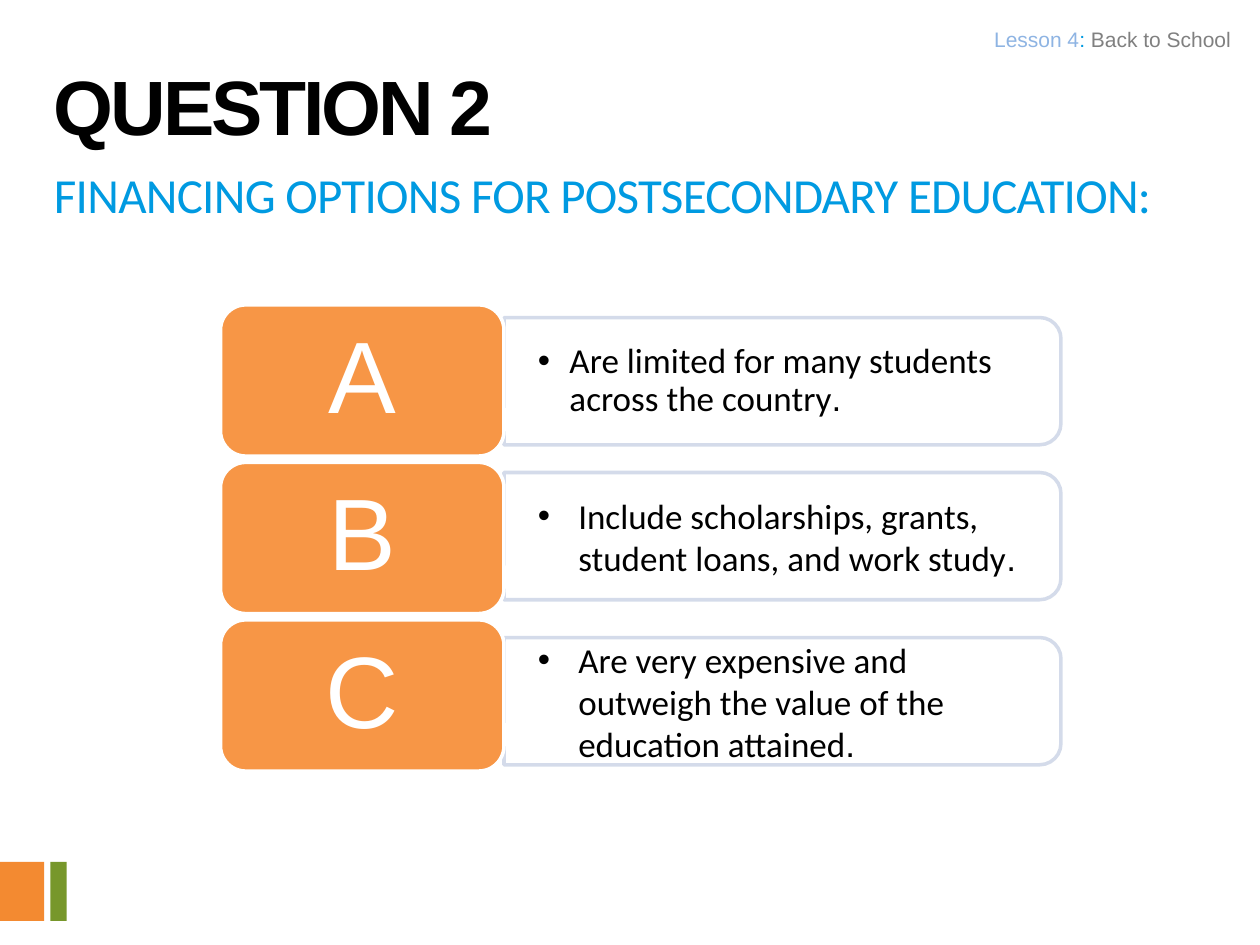
from dataclasses import dataclass

from lxml import etree
from pptx import Presentation, util as u
from pptx.dml.color import RGBColor
from pptx.enum import shapes, text
from pptx.oxml.ns import qn


@dataclass(frozen=True)
class Theme:
    sans: str = "Arial"
    body: str = "Calibri"
    black: str = "000000"
    white: str = "FFFFFF"
    blue: str = "009AE1"
    pale_blue: str = "8EB4E3"
    grey: str = "808080"
    tile: str = "F79646"
    outline: str = "D0D8E8"
    orange: str = "F38A31"
    green: str = "77972B"
    header_size: int = 12
    answer_size: int = 20
    subtitle_size: int = 28
    title_size: int = 44
    letter_size: int = 58


class Deck:
    """Places elements on a grid of 100 columns by 75 rows."""

    def __init__(self, theme):
        self.theme = theme
        self.prs = Presentation()
        self.prs.slide_width, self.prs.slide_height = u.Inches(10), u.Inches(7.5)
        self.s = self.prs.slides.add_slide(self.prs.slide_layouts[6])

    def grid(self, *cells):
        return [round(c * self.prs.slide_width / 100) for c in cells]

    def shape(self, kind, box, fill, line=None, alpha=None):
        sp = self.s.shapes.add_shape(kind, *self.grid(*box))
        sp.shadow.inherit = False
        sp.fill.solid()
        sp.fill.fore_color.rgb = RGBColor.from_string(fill)
        if line:
            sp.line.color.rgb = RGBColor.from_string(line)
            sp.line.width = u.Pt(2)
        else:
            sp.line.fill.background()
        if alpha:
            for color in sp._element.spPr.iter(qn("a:srgbClr")):
                etree.SubElement(color, qn("a:alpha"), val=str(alpha * 1000))
        return sp

    def fill_text(self, sp, runs, size, insets=(1, 0.5), align="LEFT", anchor="TOP",
                  spacing=None, tracking=None, bullet=None):
        """Fill one paragraph; runs are (text, font, colour), bullet is its indent."""
        tf = sp.text_frame
        tf.word_wrap = True
        tf.vertical_anchor = text.MSO_ANCHOR[anchor]
        tf.margin_left, tf.margin_top = self.grid(*insets)
        tf.margin_right, tf.margin_bottom = self.grid(*insets)
        p = tf.paragraphs[0]
        if bullet:
            indent, = self.grid(bullet)
            pPr = p._p.get_or_add_pPr()
            pPr.set("marL", str(indent))
            pPr.set("indent", str(-indent))
            etree.SubElement(pPr, qn("a:buFont"), typeface=self.theme.sans)
            etree.SubElement(pPr, qn("a:buChar"), char="•")
        p.alignment = text.PP_ALIGN[align]
        if spacing:
            p.line_spacing = spacing
        for words, font, color in runs:
            r = p.add_run()
            r.text = words
            r.font.name, r.font.size = font, u.Pt(size)
            r.font.color.rgb = RGBColor.from_string(color)
            if tracking:
                r._r.get_or_add_rPr().set("spc", str(round(tracking * 100)))
        return p

    def text(self, box, runs, size, **style):
        sp = self.s.shapes.add_textbox(*self.grid(*box))
        return self.fill_text(sp, runs, size, **style)

    def answer(self, letter, words, tile_top, card_top, indent, spacing=None):
        t = self.theme
        left, width, height = 40, 44.2, 10.1
        # The card stands upright before its quarter turn, about the same centre.
        upright = (left + (width - height) / 2, card_top - (width - height) / 2,
                   height, width)
        card = self.shape(shapes.MSO_SHAPE.ROUND_2_SAME_RECTANGLE, upright,
                          t.white, t.outline, alpha=90)
        card.rotation = 90
        self.text((left, card_top + 0.5, 43.7, 9.1),
                  [(words, t.body, t.black), (".", t.sans, t.black)],
                  t.answer_size, insets=(2.7, 1.4), anchor="MIDDLE",
                  spacing=spacing, bullet=indent)
        tile = self.shape(shapes.MSO_SHAPE.ROUNDED_RECTANGLE,
                          (17.5, tile_top, 22.5, 12), t.tile, t.white)
        self.fill_text(tile, [(letter, t.sans, t.white)], t.letter_size,
                       insets=(3, 1.8), align="CENTER", anchor="MIDDLE", spacing=0.9)


def main():
    t = Theme()
    deck = Deck(t)
    for left, width, color in ((0, 3.5, t.orange), (4, 1.3, t.green)):
        deck.shape(shapes.MSO_SHAPE.RECTANGLE, (left, 68.4, width, 4.7), color)

    deck.text((3.3, 12.6, 94.2, 10),
              [("FINANCING OPTIONS FOR POSTSECONDARY EDUCATION:", t.body, t.blue)],
              t.subtitle_size, tracking=-0.4)

    answers = (
        ("A", "Are limited for many students across the country", 25.2, 2.5, 0.9),
        ("B", "Include scholarships, grants, student loans, and work study",
         37.5, 3.2, None),
        ("C", "Are very expensive and outweigh the value of the education attained",
         50.6, 3.2, None),
    )
    for i, (letter, words, card_top, indent, spacing) in enumerate(answers):
        deck.answer(letter, words, 24.2 + 12.5 * i, card_top, indent, spacing)

    deck.text((40, 1.7, 58.5, 3.2),
              [("Lesson 4", t.sans, t.pale_blue), (": ", t.sans, t.blue),
               ("Back to School", t.sans, t.grey)],
              t.header_size, insets=(0.8, 0.4), align="RIGHT")
    title = deck.text((3.3, 3.3, 86.6, 8.3), [("QUESTION 2", t.sans, t.black)],
                      t.title_size, spacing=u.Pt(59), tracking=-1.8)
    title.runs[0].font.bold = True
    deck.prs.save("out.pptx")


if __name__ == "__main__":
    main()
